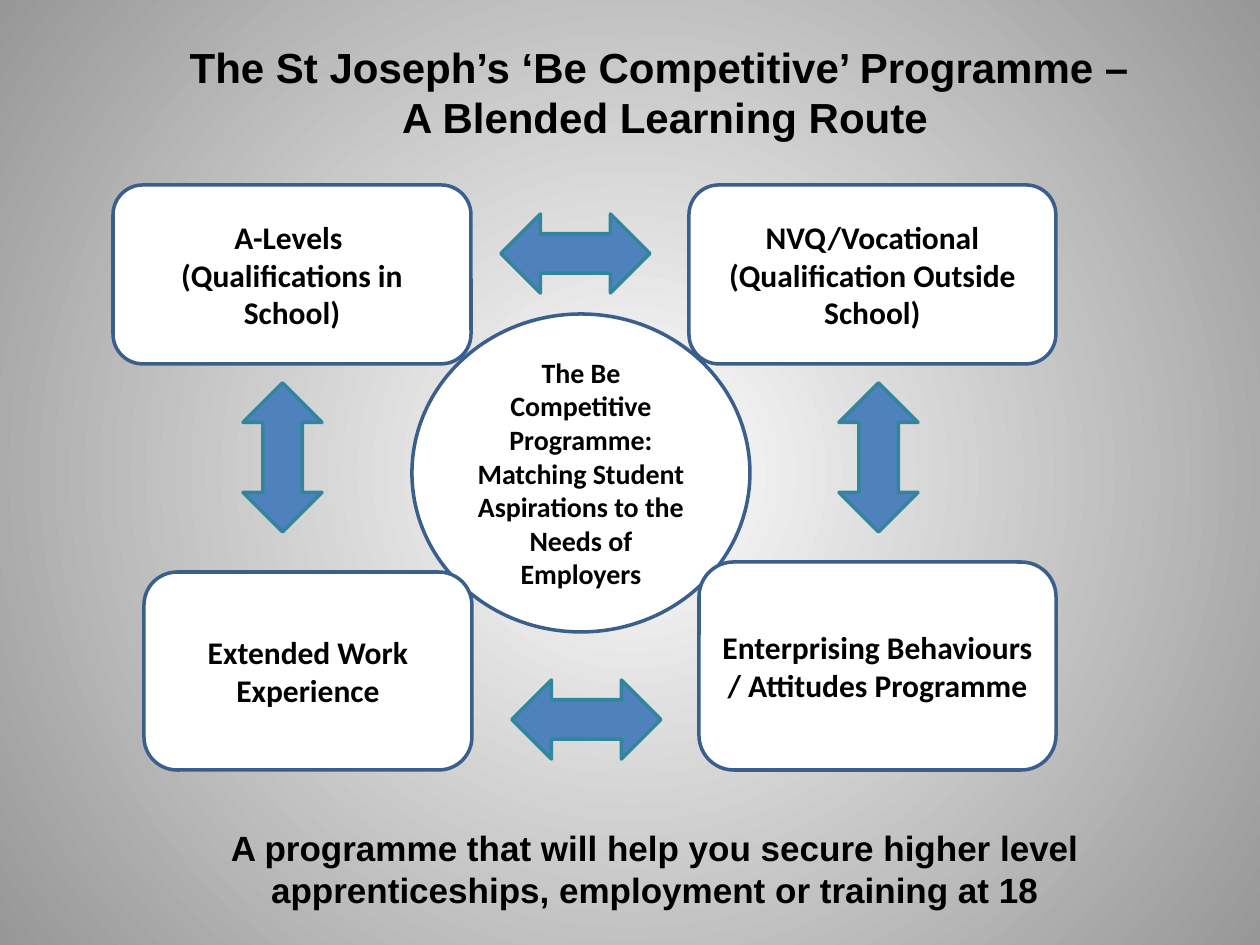
"""Build the Be Competitive programme slide: four linked routes around a central aim."""
from lxml import etree
from pptx import Presentation
from pptx import util as u
from pptx.dml.color import RGBColor
from pptx.enum import shapes, text
from pptx.oxml import ns

PX = 914400 / 126
WHITE = RGBColor(0xFF, 0xFF, 0xFF)
GREY = RGBColor(0x97, 0x97, 0x97)
BLACK = RGBColor(0, 0, 0)
NAVY = RGBColor(0x3A, 0x5F, 0x8C)
BLUE = RGBColor(0x4F, 0x81, 0xBD)
TEAL = RGBColor(0x31, 0x85, 0x9C)
KIND = shapes.MSO_SHAPE


def scaled(*lengths):
    return [u.Emu(round(length * PX)) for length in lengths]


def write(box, lines, size, name, anchor):
    frame = box.text_frame
    frame.word_wrap = True
    frame.vertical_anchor = anchor
    for index, line in enumerate(lines):
        para = frame.add_paragraph() if index else frame.paragraphs[0]
        para.alignment = text.PP_ALIGN.CENTER
        span = para.add_run()
        span.text = line
        for key, value in {"name": name, "size": u.Pt(size), "bold": True}.items():
            setattr(span.font, key, value)
        span.font.color.rgb = BLACK


deck = Presentation()
deck.slide_width, deck.slide_height = scaled(1260, 945)
page = deck.slides.add_slide(deck.slide_layouts[6])

backdrop = page.background.fill
backdrop.gradient()
for stop, position, color in zip(backdrop.gradient_stops, (0, 1), (WHITE, GREY)):
    stop.position = position
    stop.color.rgb = color
linear = page.element.find(".//" + ns.qn("a:lin"))
radial = etree.Element(ns.qn("a:path"), {"path": "circle"})
etree.SubElement(radial, ns.qn("a:fillToRect"), dict.fromkeys("ltrb", "50000"))
linear.getparent().replace(linear, radial)

panels = [
    (KIND.ROUNDED_RECTANGLE, (113, 185, 358, 179), 18,
     ["A-Levels ", "(Qualifications in School)"]),
    (KIND.ROUNDED_RECTANGLE, (689, 185, 367, 179), 18,
     ["NVQ/Vocational (Qualification Outside School)"]),
    (KIND.OVAL, (412, 314, 338, 318), 16,
     ["The Be Competitive Programme:",
      "Matching Student Aspirations to the Needs of Employers"]),
    (KIND.ROUNDED_RECTANGLE, (144, 572, 328, 198), 18, ["Extended Work Experience"]),
    (KIND.ROUNDED_RECTANGLE, (699, 562, 357, 208), 18,
     ["Enterprising Behaviours / Attitudes Programme"]),
]
for kind, place, size, lines in panels:
    panel = page.shapes.add_shape(kind, *scaled(*place))
    panel.shadow.inherit = False
    panel.fill.solid()
    panel.fill.fore_color.rgb = WHITE
    panel.line.color.rgb = NAVY
    panel.line.width = u.Pt(2)
    write(panel, lines, size, "Calibri", text.MSO_ANCHOR.MIDDLE)

for left, top, turn in [(208, 418, 90), (804, 418, 90), (512, 680, 0), (501, 214, 0)]:
    arrow = page.shapes.add_shape(KIND.LEFT_RIGHT_ARROW, *scaled(left, top, 149, 79))
    arrow.rotation = turn
    arrow.shadow.inherit = False
    arrow.fill.solid()
    arrow.fill.fore_color.rgb = BLUE
    arrow.line.color.rgb = TEAL
    arrow.line.width = u.Pt(2)

captions = [
    ((134, 35, 1062, 115), 24,
     ["The St Joseph’s ‘Be Competitive’ Programme – ", "A Blended Learning Route"]),
    ((134, 820, 1042, 97), 20,
     ["A programme that will help you secure higher level apprenticeships, "
      "employment or training at 18"]),
]
for place, size, lines in captions:
    caption = page.shapes.add_textbox(*scaled(*place))
    write(caption, lines, size, "Arial", text.MSO_ANCHOR.TOP)

deck.save("out.pptx")
